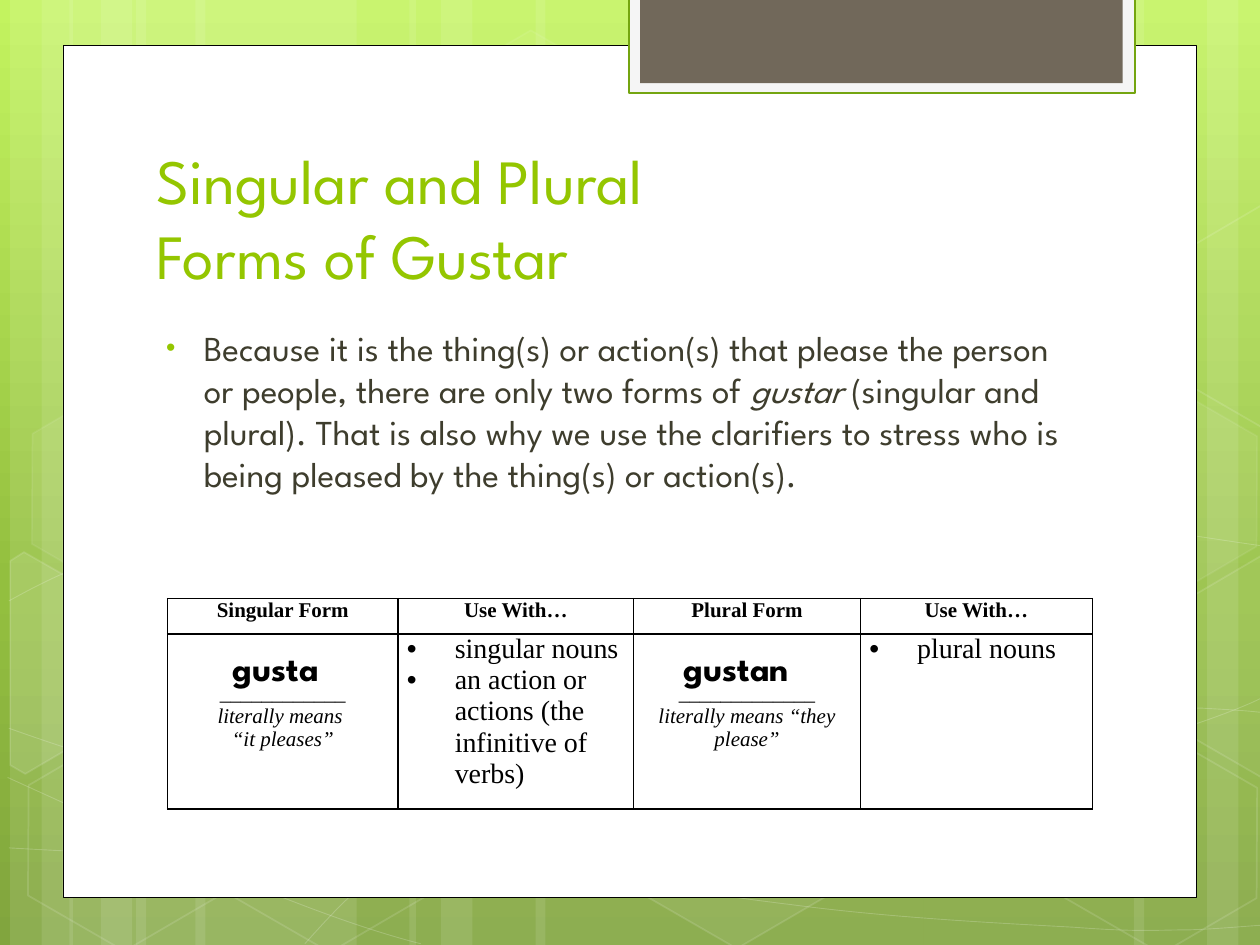
from copy import deepcopy
from dataclasses import dataclass
from math import cos, radians, sin

from lxml import etree
from pptx import Presentation
from pptx.dml.color import RGBColor
from pptx.enum.shapes import MSO_SHAPE
from pptx.enum.text import MSO_ANCHOR, PP_ALIGN
from pptx.oxml.ns import qn
from pptx.util import Inches, Pt

RECTANGLE, HEXAGON = MSO_SHAPE.RECTANGLE, MSO_SHAPE.HEXAGON
TOP, BOTTOM = MSO_ANCHOR.TOP, MSO_ANCHOR.BOTTOM
LEFT, CENTER = PP_ALIGN.LEFT, PP_ALIGN.CENTER


@dataclass(frozen=True)
class Theme:
    white: str = "FFFFFF"
    black: str = "000000"
    green: str = "94C600"
    dark: str = "3E3D2D"
    tab: str = "71685A"
    tab_frame: str = "F5F5F5"
    tab_line: str = "74A510"
    backdrop: tuple = ((0, "C3F35F"), (0.62, "93BF3F"), (1, "81A53E"))
    display: str = "League Spartan"
    serif: str = "Times New Roman"
    title: int = 36
    body: int = 20
    cell: int = 16
    small: int = 12


class SlideBuilder:
    def __init__(self, slide, theme):
        self.slide = slide
        self.theme = theme

    def backdrop(self):
        fill = self.slide.background.fill
        fill.gradient()
        fill.gradient_angle = 270
        stops = self.slide.element.find(".//" + qn("a:gsLst"))
        stops.append(deepcopy(stops[-1]))
        for stop, (position, color) in zip(fill.gradient_stops, self.theme.backdrop):
            stop.position = position
            stop.color.rgb = RGBColor.from_string(color)

    def paint(self, target, color, opacity, parent):
        if color is None:
            target.background()
            return
        target.solid()
        target.fore_color.rgb = RGBColor.from_string(color)
        if opacity < 100:
            node = parent().find(qn("a:solidFill"))[0]
            etree.SubElement(node, qn("a:alpha"), val=str(opacity * 1000))

    def style(self, shape, fill, line, width, fill_opacity, line_opacity):
        properties = shape.element.spPr
        shape.shadow.inherit = False
        self.paint(shape.fill, fill, fill_opacity, lambda: properties)
        self.paint(shape.line.fill, line, line_opacity, lambda: properties.find(qn("a:ln")))
        if line:
            shape.line.width = Pt(width)

    def shape(self, kind, box, fill=None, line=None, width=1, fill_opacity=100, line_opacity=100):
        shape = self.slide.shapes.add_shape(kind, *map(Inches, box))
        self.style(shape, fill, line, width, fill_opacity, line_opacity)
        return shape

    def hexagon(self, left, top, fill_opacity, line_opacity):
        white = self.theme.white
        shape = self.shape(HEXAGON, (left, top, 1.75, 1.52), white if fill_opacity else None,
                           white, 1, fill_opacity, line_opacity)
        shape.adjustments[0] = 0.285
        shape.rotation = 30

    def freeform(self, points, closed):
        points = [(Inches(x), Inches(y)) for x, y in points]
        builder = self.slide.shapes.build_freeform(*points[0])
        builder.add_line_segments(points[1:], close=closed)
        return builder.convert_to_shape()

    def cut_hexagon(self, points, center, fill_opacity):
        white, turn = self.theme.white, radians(30)
        offsets = [(x - center[0], y - center[1]) for x, y in points]
        upright = [(center[0] + x * cos(turn) + y * sin(turn),
                    center[1] + y * cos(turn) - x * sin(turn)) for x, y in offsets]
        shape = self.freeform(upright, True)
        shape.rotation = 30
        self.style(shape, white if fill_opacity else None, white, 1, fill_opacity, 12)

    def curve(self, knots):
        shape = self.freeform(knots[::3], False)
        outline = shape.element.find(".//" + qn("a:path"))
        for segment in outline.findall(qn("a:lnTo")):
            outline.remove(segment)
        for start in range(1, len(knots), 3):
            segment = etree.SubElement(outline, qn("a:cubicBezTo"))
            for x, y in knots[start:start + 3]:
                etree.SubElement(segment, qn("a:pt"), x=str(Inches(x) - shape.left),
                                 y=str(Inches(y) - shape.top))
        self.style(shape, None, self.theme.white, 0.5, 100, 20)

    def run(self, paragraph, text, font, size, color, bold=False, italic=False):
        run = paragraph.add_run()
        run.text = text
        run.font.name, run.font.size = font, Pt(size)
        run.font.bold, run.font.italic = bold, italic
        run.font.color.rgb = RGBColor.from_string(color)

    def bullet(self, paragraph, margin, indent, color=None, percent=None):
        properties = paragraph._p.get_or_add_pPr()
        properties.set("marL", str(Inches(margin)))
        properties.set("indent", str(Inches(indent)))
        if color:
            holder = etree.SubElement(properties, qn("a:buClr"))
            etree.SubElement(holder, qn("a:srgbClr"), val=color)
        if percent:
            etree.SubElement(properties, qn("a:buSzPct"), val=str(percent * 1000))
        etree.SubElement(properties, qn("a:buFont"), typeface="Arial")
        etree.SubElement(properties, qn("a:buChar"), char="•")

    def text(self, box, runs, size, color, anchor=TOP, bold=False):
        frame = self.slide.shapes.add_textbox(*map(Inches, box)).text_frame
        frame.word_wrap = True
        frame.vertical_anchor = anchor
        paragraph = frame.paragraphs[0]
        for text, italic in runs:
            if text == "\n":
                paragraph.add_line_break()
            else:
                self.run(paragraph, text, self.theme.display, size, color, bold, italic)
        return paragraph

    def cell(self, cell, lines, size, top=0, bold=False, bulleted=False):
        cell.fill.background()
        cell.margin_left = cell.margin_right = Inches(0.07)
        cell.margin_top, cell.margin_bottom = Inches(top), 0
        frame = cell.text_frame
        for index, (text, italic) in enumerate(lines):
            paragraph = frame.add_paragraph() if index else frame.paragraphs[0]
            paragraph.alignment = LEFT if bulleted else CENTER
            if bulleted:
                self.bullet(paragraph, 0.38, -0.38)
            self.run(paragraph, text, self.theme.serif, size, self.theme.black, bold, italic)
        properties = cell._tc.get_or_add_tcPr()
        for position, side in enumerate(("a:lnL", "a:lnR", "a:lnT", "a:lnB")):
            line = etree.Element(qn(side), w=str(Pt(1)))
            fill = etree.SubElement(line, qn("a:solidFill"))
            etree.SubElement(fill, qn("a:srgbClr"), val=self.theme.black)
            properties.insert(position, line)

    def table(self, box, columns, rows, headers, entries):
        table = self.slide.shapes.add_table(2, len(columns), *map(Inches, box)).table
        table.first_row = table.horz_banding = False
        for column, width in zip(table.columns, columns):
            column.width = Inches(width)
        for row, height in zip(table.rows, rows):
            row.height = Inches(height)
        for index, (header, lines) in enumerate(zip(headers, entries)):
            self.cell(table.cell(0, index), [(header, False)], self.theme.small, bold=True)
            if index % 2:
                self.cell(table.cell(1, index), lines, self.theme.cell, bulleted=True)
            else:
                self.cell(table.cell(1, index), lines, self.theme.small, top=0.38)


STRIPES = [(1.08, 1.75), (0.08, 0.5), (0.33, 0.83), (1.55, 1.75), (0.55, 0.5), (0.8, 0.83),
           (7.33, 1.75), (9.58, 0.5), (9, 0.83), (4.25, 3.08), (3.25, 0.5), (3.5, 0.83)]
CURVES = [
    [(0.07, 6.73), (0.61, 6.76), (1.15, 6.79), (1.9, 6.78), (2.65, 6.77), (3.58, 6.75),
     (4.58, 6.65), (5.58, 6.55), (7, 6.36), (7.92, 6.17), (8.83, 5.98), (9.77, 5.68), (10.07, 5.51)],
    [(0.07, 4.77), (0.36, 4.61), (0.65, 4.46), (1.21, 4.31), (1.78, 4.16), (2.59, 3.94),
     (3.47, 3.87), (4.36, 3.8), (5.44, 3.79), (6.54, 3.87), (7.64, 3.95), (9.47, 4.26), (10.07, 4.34)],
    [(0.06, 6.17), (1.27, 6.72), (2.47, 7.27), (3.34, 7.49)],
    [(0.07, 5.78), (0.38, 5.89), (0.7, 6), (1.28, 6.16), (1.86, 6.31), (2.73, 6.56), (3.57, 6.73),
     (4.4, 6.9), (5.45, 7.08), (6.28, 7.18), (7.11, 7.29), (8, 7.33), (8.53, 7.36),
     (9.05, 7.4), (9.19, 7.38), (9.45, 7.38), (9.71, 7.37), (9.89, 7.35), (10.07, 7.34)],
    [(2.42, 7.49), (2.6, 7.29), (2.78, 7.09), (3.02, 6.91), (3.26, 6.73), (3.6, 6.53), (3.88, 6.39),
     (4.16, 6.25), (4.33, 6.19), (4.7, 6.09), (5.06, 5.99), (5.73, 5.85), (6.08, 5.78),
     (6.44, 5.71), (6.49, 5.71), (6.8, 5.69), (7.11, 5.66), (7.6, 5.63), (7.94, 5.62),
     (8.29, 5.61), (8.86, 5.62), (8.86, 5.62), (9.08, 5.62), (9.31, 5.62), (9.53, 5.62),
     (9.71, 5.63), (9.88, 5.64), (9.97, 5.65), (10.06, 5.66), (10.03, 5.65), (10.06, 5.66)],
]
HEXAGONS = [(3.34, 0.36, 4, 8), (4.97, 5.89, 6, 12), (0.11, 5.91, 0, 12), (0.14, 3.12, 7, 8),
            (1.74, 5.92, 0, 12), (7.53, 4.53, 10, 12), (8.34, 5.93, 0, 12), (8.34, 3.14, 7, 8)]
LEFT_EDGE = [(0.08, 4.45), (0.19, 4.38), (0.96, 4.82), (0.95, 5.7), (0.2, 6.14), (0.08, 6.07)]
RIGHT_EDGE = [(9.26, 4.85), (10.01, 4.41), (10.09, 4.46), (10.09, 6.13), (10.02, 6.17), (9.26, 5.73)]


def main():
    presentation = Presentation()
    presentation.slide_width, presentation.slide_height = Inches(10), Inches(7.5)
    theme = Theme()
    builder = SlideBuilder(presentation.slides.add_slide(presentation.slide_layouts[6]), theme)
    builder.backdrop()
    for left, width in STRIPES:
        builder.shape(RECTANGLE, (left, 0, width, 7.5), theme.white, fill_opacity=10)
    for knots in CURVES:
        builder.curve(knots)
    for hexagon in HEXAGONS:
        builder.hexagon(*hexagon)
    builder.cut_hexagon(LEFT_EDGE, (0.36, 5.35), 10)
    builder.cut_hexagon(RIGHT_EDGE, (9.85, 5.2), 4)
    builder.cut_hexagon([(x, y - 2.78) for x, y in RIGHT_EDGE], (9.85, 2.42), 0)
    builder.shape(RECTANGLE, (0.5, 0.36, 9, 6.76), theme.white, theme.black, 0.5)
    builder.shape(RECTANGLE, (4.99, -0.02, 4.02, 0.76), theme.tab_frame, theme.tab_line, 1.25)
    builder.shape(RECTANGLE, (5.08, -0.02, 3.83, 0.68), theme.tab)

    title = [("Singular and Plural ", False), ("\n", False), ("Forms of Gustar", False)]
    builder.text((1.14, 1.12, 7.68, 1.25), title, theme.title, theme.green, BOTTOM)
    explanation = [
        ("Because it is the thing(s) or action(s) that please the person or people, "
         "there are only two forms of ", False),
        ("gustar ", True),
        ("(singular and plural). That is also why we use the clarifiers to stress who is "
         "being pleased by the thing(s) or action(s).", False)]
    paragraph = builder.text((1.14, 2.54, 7.41, 3.84), explanation, theme.body, theme.dark)
    paragraph.space_before = Pt(4)
    builder.bullet(paragraph, 0.38, -0.3, theme.green, 76)

    builder.table(
        (1.33, 4.75, 7.33, 1.67), (1.83, 1.87, 1.8, 1.84), (0.28, 1.39),
        ("Singular Form", "Use With…", "Plural Form", "Use With…"),
        ([("____________", False), ("literally means ", True), ("“it pleases”", True)],
         [("singular nouns", False), ("an action or actions (the infinitive of verbs)", False)],
         [("_____________", False), ("literally means “they please”", True)],
         [("plural nouns", False)]))
    for word, left, width in (("gusta", 1.75, 1), ("gustan", 5.33, 1.17)):
        builder.text((left, 5.08, width, 0.44), [(word, False)], theme.body, theme.black, bold=True)
    presentation.save("out.pptx")


if __name__ == "__main__":
    main()
